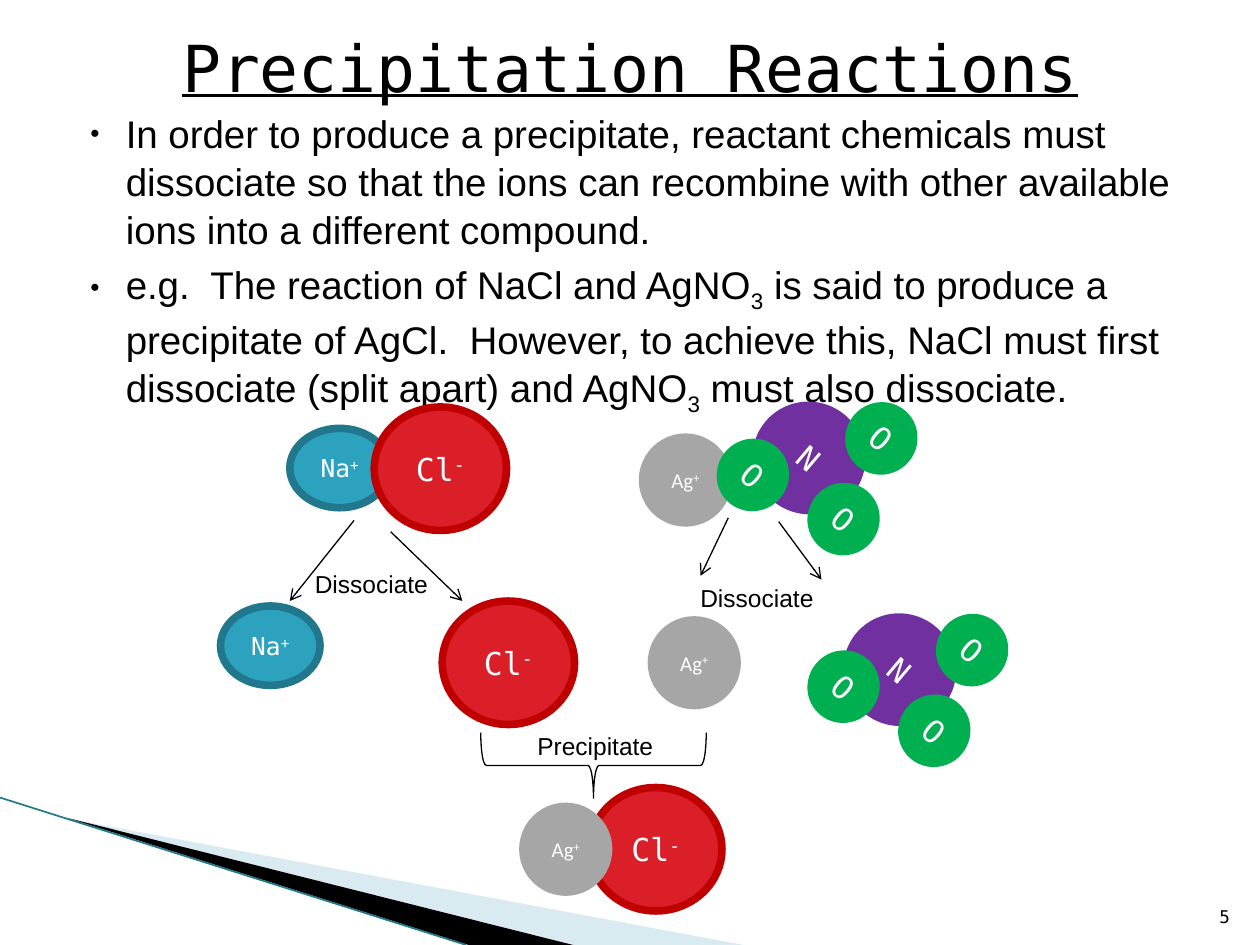
from collections import namedtuple

from lxml.etree import SubElement
from pptx import Presentation
from pptx.dml.color import RGBColor
from pptx.enum.shapes import MSO_CONNECTOR, MSO_SHAPE
from pptx.enum.text import MSO_ANCHOR, MSO_AUTO_SIZE, PP_ALIGN
from pptx.oxml.ns import qn
from pptx.util import Inches, Pt

BLACK = RGBColor(0x00, 0x00, 0x00)
WHITE = RGBColor(0xFF, 0xFF, 0xFF)
BLUE = RGBColor(0x2D, 0xA2, 0xBF)
TEAL = RGBColor(0x21, 0x78, 0x8D)
RED = RGBColor(0xDA, 0x1F, 0x28)
DARK_RED = RGBColor(0xC0, 0x00, 0x00)
GRAY = RGBColor(0xA6, 0xA6, 0xA6)
PURPLE = RGBColor(0x70, 0x30, 0xA0)
GREEN = RGBColor(0x00, 0xB0, 0x50)
PALE_BLUE = RGBColor(0xA0, 0xCB, 0xDC)

MONO, SANS, HUMANIST = "DejaVu Sans Mono", "Arial", "Calibri"
COLUMNS, ROWS = 100, 75

Atom = namedtuple("Atom", "symbol charge width height fill line font size rotation")
SODIUM = Atom("Na", "+", 7.9, 6.3, BLUE, TEAL, MONO, 14, 0)
CHLORIDE = Atom("Cl", "-", 10.5, 9.8, RED, DARK_RED, MONO, 18, 0)
SILVER = Atom("Ag", "+", 6.8, 6.8, GRAY, GRAY, HUMANIST, 12, 0)
NITROGEN = Atom("N", "", 8.4, 8.3, PURPLE, PURPLE, MONO, 18, 40.1)
OXYGEN = Atom("O", "", 5.1, 5.2, GREEN, GREEN, MONO, 18, 40.1)
OXYGEN_OFFSETS = ((4.4, 6.4), (7.4, 0), (-2.8, 2.9))

BULLETS = (
    (("In order to produce a precipitate, reactant chemicals must dissociate so that "
      "the ions can recombine with other available ions into a different compound.", 0),),
    (("e.g.  The reaction of NaCl and AgNO", 0), ("3", -25),
     (" is said to produce a precipitate of AgCl.  However, to achieve this, "
      "NaCl must first dissociate (split apart) and AgNO", 0), ("3", -25),
     (" must also dissociate.", 0)),
)


class SlideBuilder:
    """Draws styled elements on one slide, placed in grid columns and rows."""

    def __init__(self, presentation):
        self.slide = presentation.slides.add_slide(presentation.slide_layouts[5])
        self.shapes = self.slide.shapes
        self.column = presentation.slide_width / COLUMNS
        self.row = presentation.slide_height / ROWS

    def place(self, column, row):
        return round(column * self.column), round(row * self.row)

    def box(self, left, top, width, height):
        return *self.place(left, top), *self.place(width, height)

    def add_runs(self, paragraph, pieces, font, size, color):
        for text, baseline in pieces:
            run = paragraph.add_run()
            run.text = text
            run.font.name, run.font.size = font, Pt(size)
            run.font.color.rgb = color
            if baseline:
                run.font._element.set("baseline", str(baseline * 1000))

    def title(self, text, *box):
        title = self.shapes.title
        title.left, title.top, title.width, title.height = self.box(*box)
        frame = title.text_frame
        frame.text = text
        frame.auto_size = MSO_AUTO_SIZE.NONE
        frame.vertical_anchor = MSO_ANCHOR.MIDDLE
        frame.paragraphs[0].alignment = PP_ALIGN.CENTER
        font = frame.paragraphs[0].runs[0].font
        font.name, font.size, font.underline = MONO, Pt(37), True
        font.color.rgb = BLACK

    def bullets(self, items, *box):
        frame = self.shapes.add_textbox(*self.box(*box)).text_frame
        frame.word_wrap = True
        for index, pieces in enumerate(items):
            paragraph = frame.add_paragraph() if index else frame.paragraphs[0]
            paragraph.line_spacing = 1.04
            if index:
                paragraph.space_before = Pt(4)
            properties = paragraph._p.get_or_add_pPr()
            properties.set("marL", str(Inches(0.4)))
            properties.set("indent", str(Inches(-0.28)))
            SubElement(properties, qn("a:buSzPct"), val="68000")
            SubElement(properties, qn("a:buFont"), typeface=SANS)
            SubElement(properties, qn("a:buChar"), char="•")
            self.add_runs(paragraph, pieces, SANS, 22, BLACK)

    def label(self, text, *box, font=SANS, size=14,
              alignment=PP_ALIGN.LEFT, anchor=MSO_ANCHOR.TOP):
        frame = self.shapes.add_textbox(*self.box(*box)).text_frame
        frame.word_wrap = True
        frame.vertical_anchor = anchor
        frame.paragraphs[0].alignment = alignment
        self.add_runs(frame.paragraphs[0], ((text, 0),), font, size, BLACK)

    def atom(self, atom, left, top):
        shape = self.shapes.add_shape(
            MSO_SHAPE.OVAL, *self.box(left, top, atom.width, atom.height))
        shape.shadow.inherit = False
        shape.rotation = atom.rotation
        shape.fill.solid()
        shape.fill.fore_color.rgb = atom.fill
        shape.line.color.rgb = atom.line
        shape.line.width = Pt(4.33)
        frame = shape.text_frame
        frame.margin_left = frame.margin_right = 0
        frame.margin_top = frame.margin_bottom = 0
        frame.vertical_anchor = MSO_ANCHOR.MIDDLE
        frame.paragraphs[0].alignment = PP_ALIGN.CENTER
        pieces = [(atom.symbol, 0)]
        if atom.charge:
            pieces.append((atom.charge, 30))
        self.add_runs(frame.paragraphs[0], pieces, atom.font, atom.size, WHITE)

    def nitrate(self, left, top):
        self.atom(NITROGEN, left, top)
        for across, down in OXYGEN_OFFSETS:
            self.atom(OXYGEN, left + across, top + down)

    def line(self, start, end, color=BLACK, width=0.75, arrow=True):
        connector = self.shapes.add_connector(
            MSO_CONNECTOR.STRAIGHT, *self.place(*start), *self.place(*end))
        connector.line.color.rgb = color
        connector.line.width = Pt(width)
        if arrow:
            SubElement(connector.line._get_or_add_ln(), qn("a:tailEnd"), type="arrow")
        SubElement(connector._element.spPr, qn("a:effectLst"))

    def brace(self, *box):
        shape = self.shapes.add_shape(MSO_SHAPE.RIGHT_BRACE, *self.box(*box))
        shape.shadow.inherit = False
        shape.rotation = 90
        shape.fill.background()
        shape.line.color.rgb = BLACK
        shape.line.width = Pt(0.75)

    def wedge(self, points, color, opacity=100):
        start, *others = [self.place(*point) for point in points]
        builder = self.shapes.build_freeform(*start)
        builder.add_line_segments(others)
        shape = builder.convert_to_shape()
        shape.shadow.inherit = False
        shape.fill.solid()
        shape.fill.fore_color.rgb = color
        shape.line.fill.background()
        if opacity < 100:
            fill_color = shape._element.spPr.find(f".//{qn('a:srgbClr')}")
            SubElement(fill_color, qn("a:alpha"), val=str(opacity * 1000))


def main():
    presentation = Presentation()
    presentation.slide_width, presentation.slide_height = Inches(10), Inches(7.5)
    builder = SlideBuilder(presentation)

    builder.wedge(((5.5, 65), (59, 75), (45.6, 75)), PALE_BLUE, 40)
    builder.wedge(((5.3, 64.9), (45.5, 75), (37.2, 75)), BLACK)
    builder.line((0, 63.3), (37, 75), TEAL, 0.95, arrow=False)

    builder.title("Precipitation Reactions", 5, 1.7, 90, 7.2)
    builder.bullets(BULLETS, 5, 8.1, 90, 26.7)
    builder.label("5", 94.6, 70.1, 4, 4, font=MONO, size=10,
                  alignment=PP_ALIGN.RIGHT, anchor=MSO_ANCHOR.BOTTOM)

    for atom, left, top in (
        (SODIUM, 23, 34), (CHLORIDE, 29.7, 32.3), (SILVER, 51, 34.7),
        (SODIUM, 17.5, 48.1), (CHLORIDE, 35.1, 47.7), (SILVER, 51.7, 49.2),
        (CHLORIDE, 46.8, 62.5), (SILVER, 41.5, 64),
    ):
        builder.atom(atom, left, top)
    builder.nitrate(60, 32.2)
    builder.nitrate(67.2, 49)

    for start, end in (
        ((28.1, 41.3), (23, 47.7)), ((31, 42.2), (36.7, 47.7)),
        ((57.8, 41.1), (55.6, 45.7)), ((61.8, 41.4), (65.2, 46)),
    ):
        builder.line(start, end)
    builder.brace(44.5, 51.8, 5.2, 17.9)

    builder.label("Dissociate", 24, 44.7, 13.7, 3.4)
    builder.label("Dissociate", 54.6, 45.8, 13.7, 3.4)
    builder.label("Precipitate", 40.4, 57.5, 13.7, 3.4, alignment=PP_ALIGN.CENTER)
    presentation.save("out.pptx")


if __name__ == "__main__":
    main()
